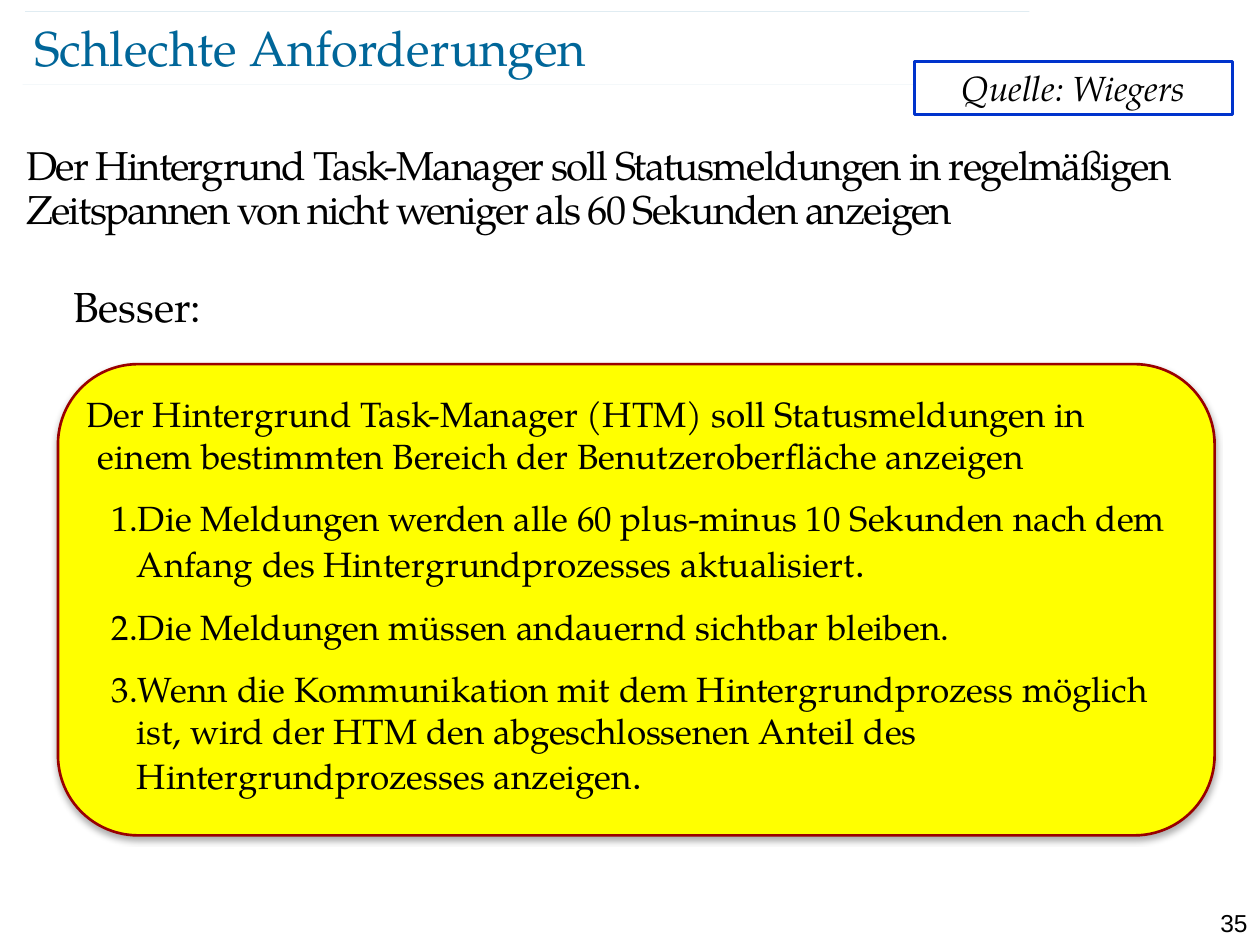
import pptx
import pptx.util
import pptx.dml.color
import pptx.enum.shapes
import pptx.enum.text
import pptx.oxml
import pptx.oxml.ns
import lxml.etree

Inches, Pt = pptx.util.Inches, pptx.util.Pt
Color = pptx.dml.color.RGBColor
Shape = pptx.enum.shapes.MSO_SHAPE
Align = pptx.enum.text.PP_ALIGN
Anchor = pptx.enum.text.MSO_ANCHOR
qn = pptx.oxml.ns.qn

TEAL = Color(0x00, 0x66, 0x99)
BLACK = Color(0, 0, 0)
WHITE = Color(255, 255, 255)
BLUE = Color(0x00, 0x33, 0xCC)
YELLOW = Color(255, 255, 0)
RED = Color(0x99, 0, 0)


def add_sub(parent, tag, **attrs):
    return lxml.etree.SubElement(parent, qn(tag), attrs)


class Deck:
    face = "TeX Gyre Pagella"

    def __init__(self):
        self.prs = pptx.Presentation()
        self.prs.slide_width, self.prs.slide_height = Inches(10), Inches(7.5)
        self.slide = self.prs.slides.add_slide(self.prs.slide_layouts[5])

    def place(self, shape, box):
        shape.left, shape.top, shape.width, shape.height = map(Inches, box)

    def frame(self, shape, inset, anchor=Anchor.TOP):
        tf = shape.text_frame
        tf.word_wrap = True
        tf.vertical_anchor = anchor
        tf.margin_left = tf.margin_right = Inches(inset[0])
        tf.margin_top = tf.margin_bottom = Inches(inset[1])
        return tf

    def font(self, para, size, color=BLACK, face=None, italic=None):
        font = para.font
        font.size, font.name, font.italic = Pt(size), face or self.face, italic
        font.color.rgb = color

    def fill_para(self, para, text, size, align=Align.LEFT, **style):
        para.alignment = align
        para.add_run().text = text
        self.font(para, size, **style)

    def title(self, text, box):
        shape = self.slide.shapes.title
        self.place(shape, box)
        tf = self.frame(shape, (0, 0), Anchor.MIDDLE)
        self.fill_para(tf.paragraphs[0], text, 28, color=TEAL)

    def text(self, text, box, size, inset=(0.04, 0.04), **style):
        shape = self.slide.shapes.add_textbox(*map(Inches, box))
        para = self.frame(shape, inset).paragraphs[0]
        self.fill_para(para, text, size, **style)
        return para

    def panel(self, kind, box, fill, line):
        shape = self.slide.shapes.add_shape(kind, *map(Inches, box))
        shape.fill.solid()
        shape.fill.fore_color.rgb = fill
        shape.line.color.rgb = line
        shape.line.width = Pt(1.5)
        shape.shadow.inherit = False
        return shape, self.frame(shape, (0.04, 0.04))

    def shade(self, shape):
        effects = shape._element.spPr.find(qn("a:effectLst"))
        shadow = add_sub(effects, "a:outerShdw", blurRad=str(Pt(3.5)),
                         dist=str(Pt(2.2)), dir="5400000", rotWithShape="0")
        color = add_sub(shadow, "a:srgbClr", val="000000")
        add_sub(color, "a:alpha", val="32000")

    def indent(self, para, left, first):
        props = para._p.get_or_add_pPr()
        props.set("marL", str(Inches(left)))
        props.set("indent", str(Inches(first)))
        return props

    def item(self, tf, text, stop):
        para = tf.add_paragraph()
        para.level = 1
        para.space_before = Pt(11.5)
        props = self.indent(para, 0.4, -0.2)
        add_sub(props, "a:buFont", typeface=self.face)
        add_sub(props, "a:buAutoNum", type="arabicPeriod")
        self.fill_para(para, text, 20)
        if stop:
            run = para.add_run()
            run.text = "."
            run.font.size = Pt(22)

    def rule(self, left, top, width):
        line = self.slide.shapes.add_connector(
            pptx.enum.shapes.MSO_CONNECTOR.STRAIGHT,
            Inches(left), Inches(top), Inches(left + width), Inches(top))
        line.line.color.rgb = TEAL
        line.line.width = Pt(0.1)
        color = line._element.spPr.find(".//" + qn("a:srgbClr"))
        add_sub(color, "a:alpha", val="35000")
        add_sub(line._element.spPr, "a:effectLst")


def main():
    deck = Deck()

    # Title between two hairlines, and page number
    deck.rule(0.18, 0.67, 7.97)
    deck.rule(0.2, 0.09, 7.97)
    deck.text("35", (9.45, 7.16, 0.55, 0.24), 14, inset=(0.1, 0.05),
              align=Align.RIGHT, face="Arial")
    deck.title("Schlechte Anforderungen", (0.27, 0.13, 8.69, 0.48))

    # Weak requirement
    para = deck.text(
        "Der Hintergrund Task-Manager soll Statusmeldungen in regelmäßigen "
        "Zeitspannen von nicht weniger als 60 Sekunden anzeigen",
        (0.11, 1.11, 9.76, 0.85), 23, inset=(0.1, 0.05))
    para.line_spacing = 0.9
    para.runs[0]._r.get_or_add_rPr().set("spc", "-100")

    # Source label
    label, tf = deck.panel(Shape.RECTANGLE, (7.26, 0.49, 2.52, 0.42),
                           WHITE, BLUE)
    deck.fill_para(tf.paragraphs[0], "Quelle: Wiegers", 20,
                   align=Align.CENTER, italic=True)

    # Better requirement
    card, tf = deck.panel(Shape.ROUNDED_RECTANGLE, (0.46, 2.89, 9.18, 3.74),
                          YELLOW, RED)
    card.adjustments[0] = 0.17
    deck.shade(card)
    lead = tf.paragraphs[0]
    deck.indent(lead, 0.09, -0.09)
    deck.fill_para(
        lead, "Der Hintergrund Task-Manager (HTM) soll Statusmeldungen "
        "in einem bestimmten Bereich der Benutzeroberfläche anzeigen", 20)
    items = [
        ("Die Meldungen werden alle 60 plus-minus 10 Sekunden nach dem "
         "Anfang des Hintergrundprozesses aktualisiert", True),
        ("Die Meldungen müssen andauernd sichtbar bleiben.", False),
        ("Wenn die Kommunikation mit dem Hintergrundprozess möglich ist, "
         "wird der HTM den abgeschlossenen Anteil des "
         "Hintergrundprozesses anzeigen", True),
    ]
    for text, stop in items:
        deck.item(tf, text, stop)

    deck.text("Besser:", (0.54, 2.19, 2.02, 0.48), 24)

    deck.prs.save("out.pptx")


if __name__ == "__main__":
    main()
